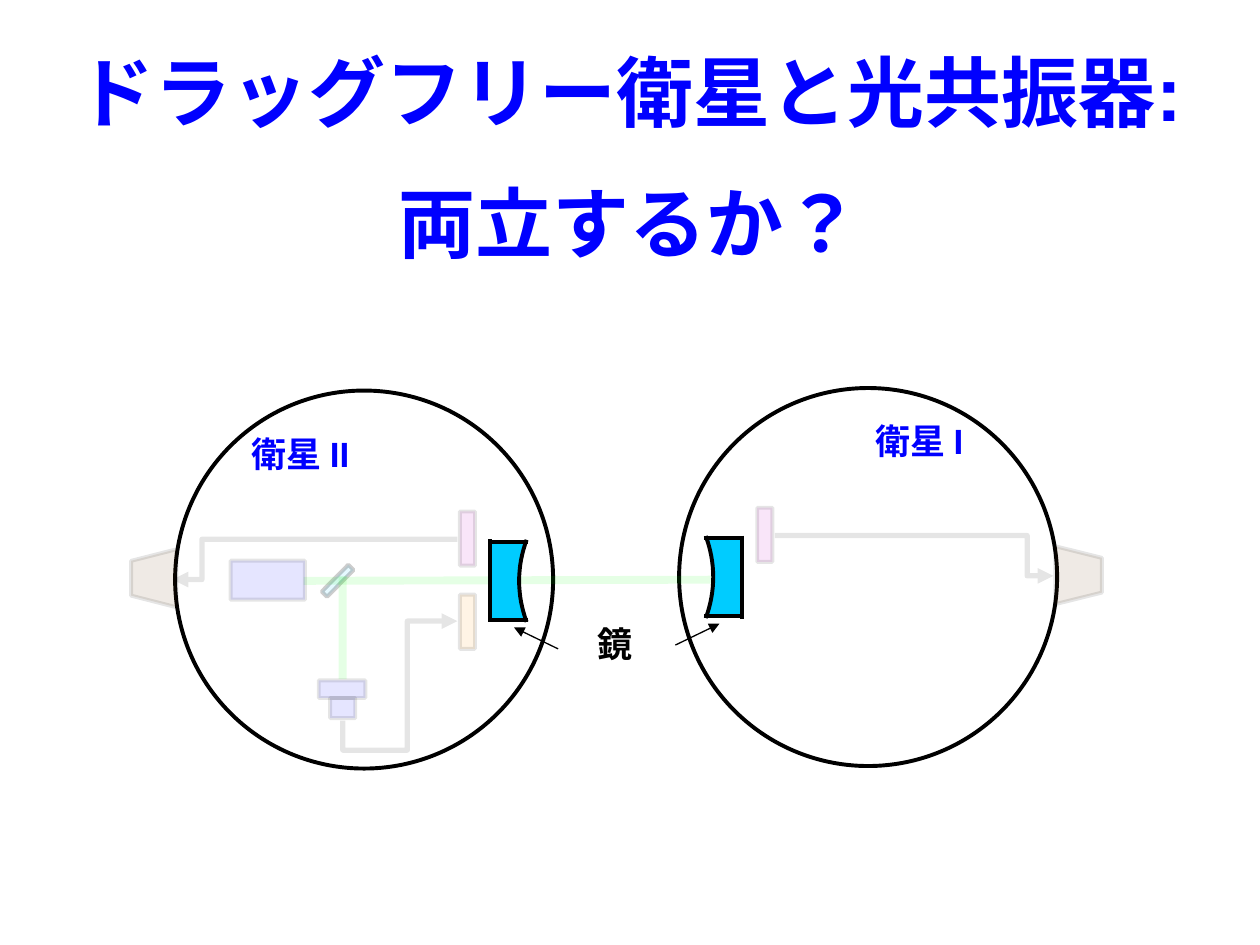
from math import cos, radians, sin, sqrt
from typing import NamedTuple, Optional

from lxml.etree import SubElement
from pptx import Presentation
from pptx.dml.color import RGBColor
from pptx.enum.lang import MSO_LANGUAGE_ID
from pptx.enum.shapes import MSO_CONNECTOR, MSO_SHAPE
from pptx.enum.text import MSO_ANCHOR, PP_ALIGN
from pptx.oxml.ns import qn
from pptx.util import Inches, Pt

BLACK = RGBColor(0x00, 0x00, 0x00)
BLUE = RGBColor(0x00, 0x00, 0xFF)
GREEN = RGBColor(0x00, 0xFF, 0x00)
CYAN = RGBColor(0x00, 0xCC, 0xFF)
PURPLE = RGBColor(0xCC, 0x00, 0xCC)
BROWN = RGBColor(0x66, 0x33, 0x00)
ORANGE = RGBColor(0xFF, 0x99, 0x00)
FAINT = 10
SOLID = 100


class Part(NamedTuple):
    left: float
    top: float
    width: float
    height: float
    fill: Optional[RGBColor] = None
    kind: MSO_SHAPE = MSO_SHAPE.RECTANGLE
    rotation: float = 0
    opacity: int = FAINT


class Label(NamedTuple):
    text: str
    left: float
    top: float
    width: float
    height: float
    color: RGBColor = BLUE
    size: int = 20
    align: PP_ALIGN = PP_ALIGN.JUSTIFY


class Link(NamedTuple):
    start: tuple[float, float]
    end: tuple[float, float]
    color: RGBColor = BLACK
    width: float = 3
    opacity: int = FAINT
    arrow: bool = False
    bends: tuple[float, ...] = ()
    rotation: int = 0


class Mirror(NamedTuple):
    back: float
    top: float
    direction: int  # 1 when the hollow face looks right, -1 when it looks left


def set_opacity(element, opacity: int) -> None:
    if opacity < SOLID:
        for color in element.iter(qn("a:srgbClr")):
            SubElement(color, qn("a:alpha"), val=str(opacity * 1000))


def style_shape(shape, fill: Optional[RGBColor], line_width: float) -> None:
    shape.shadow.inherit = False
    if fill is None:
        shape.fill.background()
    else:
        shape.fill.solid()
        shape.fill.fore_color.rgb = fill
    shape.line.color.rgb = BLACK
    shape.line.width = Pt(line_width)


def draw_part(page, part: Part) -> None:
    shape = page.shapes.add_shape(part.kind, *map(Inches, part[:4]))
    shape.rotation = part.rotation
    style_shape(shape, part.fill, 2.25)
    set_opacity(shape.element.spPr, part.opacity)


def draw_label(page, label: Label):
    box = page.shapes.add_textbox(*map(Inches, label[1:5]))
    frame = box.text_frame
    frame.word_wrap = True
    frame.text = label.text
    para = frame.paragraphs[0]
    para.alignment = label.align
    para._p.get_or_add_pPr().set("hangingPunct", "0")
    for span in para.runs:
        span.font.name = "Arial"
        span.font.language_id = MSO_LANGUAGE_ID.JAPANESE
        span.font.size = Pt(label.size)
        span.font.bold = True
        span.font.color.rgb = label.color
    return frame


def draw_link(page, link: Link) -> None:
    """Draw a straight line, or an elbow with one adjustment per bend."""
    kind = MSO_CONNECTOR.ELBOW if link.bends else MSO_CONNECTOR.STRAIGHT
    connector = page.shapes.add_connector(kind, *map(Inches, link.start + link.end))
    connector.line.color.rgb = link.color
    connector.line.width = Pt(link.width)
    properties = connector.element.spPr
    set_opacity(properties, link.opacity)
    if link.arrow:
        SubElement(connector.line._ln, qn("a:tailEnd"), type="triangle")
    SubElement(properties, qn("a:effectLst"))
    if link.rotation:
        properties.find(qn("a:xfrm")).set("rot", str(link.rotation * 60000))
    if link.bends:
        geometry = properties.find(qn("a:prstGeom"))
        geometry.set("prst", f"bentConnector{len(link.bends) + 2}")
        guides = geometry.get_or_add_avLst()
        for number, bend in enumerate(link.bends, 1):
            SubElement(guides, qn("a:gd"), name=f"adj{number}",
                       fmla=f"val {round(bend * 100000)}")


def draw_face(page, mirror: Mirror) -> None:
    """Draw the hollow face as a turned arc whose box has the arc's centre as a corner."""
    radius, half_angle, steps = 0.92, 20.7, 16
    side = radius * cos(radians(45 - half_angle))
    pivot = mirror.back + mirror.direction * (1.15 - side / sqrt(2))
    corner_x = pivot - mirror.direction * side / 2
    corner_y = mirror.top + 0.31 + side / 2
    angles = [radians(45 - half_angle + 2 * half_angle * step / steps)
              for step in range(steps + 1)]
    points = [(Inches(corner_x + mirror.direction * radius * cos(angle)),
               Inches(corner_y - radius * sin(angle))) for angle in angles]
    builder = page.shapes.build_freeform(Inches(corner_x), Inches(corner_y), scale=1.0)
    builder.move_to(*points[0])
    builder.add_line_segments(points[1:], close=False)
    face = builder.convert_to_shape()
    face.rotation = 180 + 45 * mirror.direction
    style_shape(face, None, 2.25)


def draw_mirror(page, mirror: Mirror) -> None:
    """Draw the body, its three straight edges and the hollow face."""
    back, top, direction = mirror
    bottom = top + 0.62
    outline = [(0, 0), (0, 0.62), (0.28, 0.62), (0.24, 0.45),
               (0.23, 0.31), (0.24, 0.15), (0.28, 0)]
    points = [(Inches(back + direction * x), Inches(top + y)) for x, y in outline]
    builder = page.shapes.build_freeform(*points[0], scale=1.0)
    builder.add_line_segments(points[1:], close=True)
    style_shape(builder.convert_to_shape(), CYAN, 0.75)

    near, far = back - direction * 0.01, back + direction * 0.3
    edges = [((back, top - 0.02), (back, bottom + 0.02)),
             ((near, top), (far, top)), ((near, bottom), (far, bottom))]
    for start, end in edges:
        draw_link(page, Link(start, end, width=2.25, opacity=SOLID))
    draw_face(page, mirror)


THRUSTER = MSO_SHAPE.FLOWCHART_MANUAL_OPERATION
SATELLITE_ONE = [
    Part(5.39, 3.08, 3, 3, kind=MSO_SHAPE.OVAL, opacity=SOLID),
    Label("衛星 I", 6.85, 3.28, 1.17, 0.55),
    Part(6.01, 4.03, 0.12, 0.43, PURPLE),
    Part(8.33, 4.38, 0.46, 0.37, BROWN, THRUSTER, 270),
    Link((6.15, 4.25), (8.36, 4.57), arrow=True, bends=(0.906,)),
]
SATELLITE_TWO = [
    Part(1.39, 3.1, 3, 3, kind=MSO_SHAPE.OVAL, opacity=SOLID),
    Label("衛星 II", 1.9, 3.38, 1.17, 0.55),
    Part(0.99, 4.41, 0.46, 0.36, BROWN, THRUSTER, 90),
    Part(3.65, 4.06, 0.12, 0.43, PURPLE),
    Link((3.63, 4.28), (1.37, 4.6), arrow=True, bends=(0.897,)),
    *(Part(2.65, 4.46, 0.06, 0.3, fill, rotation=44.7) for fill in (CYAN, None)),
    Link((2.72, 4.57), (2.72, 5.39), GREEN, 4.5),
    Link((2.41, 4.61), (5.88, 4.6), GREEN, 4.5),
    Part(1.83, 4.45, 0.59, 0.31, BLUE),
    Part(3.65, 4.72, 0.12, 0.43, ORANGE),
    Part(2.62, 5.54, 0.2, 0.16, BLUE),
    Part(2.53, 5.4, 0.37, 0.14, BLUE),
    Link((3.57, 5.78), (2.78, 4.87), arrow=True, bends=(-0.296, 0.563), rotation=90),
]
MIRROR_POINTERS = [
    Link((4.43, 5.15), (4.08, 4.98), width=0.75, opacity=SOLID, arrow=True),
    Link((5.36, 5.12), (5.71, 4.95), width=0.75, opacity=SOLID, arrow=True),
]
MIRRORS = [Mirror(5.89, 4.27, -1), Mirror(3.89, 4.3, 1)]
DRAW = {Part: draw_part, Label: draw_label, Link: draw_link, Mirror: draw_mirror}


def main() -> None:
    deck = Presentation()
    deck.slide_width, deck.slide_height = Inches(10), Inches(7.5)
    page = deck.slides.add_slide(deck.slide_layouts[6])

    title = draw_label(page, Label("ドラッグフリー衛星と光共振器: \v両立するか？",
                                   0.5, 0.3, 9, 1.88, size=44, align=PP_ALIGN.CENTER))
    title.vertical_anchor = MSO_ANCHOR.MIDDLE
    caption = draw_label(page, Label("鏡", 4.66, 4.93, 0.87, 0.53, BLACK))
    caption.margin_left = caption.margin_right = Inches(0.08)
    caption.margin_top = caption.margin_bottom = Inches(0.01)

    for item in MIRROR_POINTERS + SATELLITE_ONE + SATELLITE_TWO + MIRRORS:
        DRAW[type(item)](page, item)
    deck.save("out.pptx")


if __name__ == "__main__":
    main()
